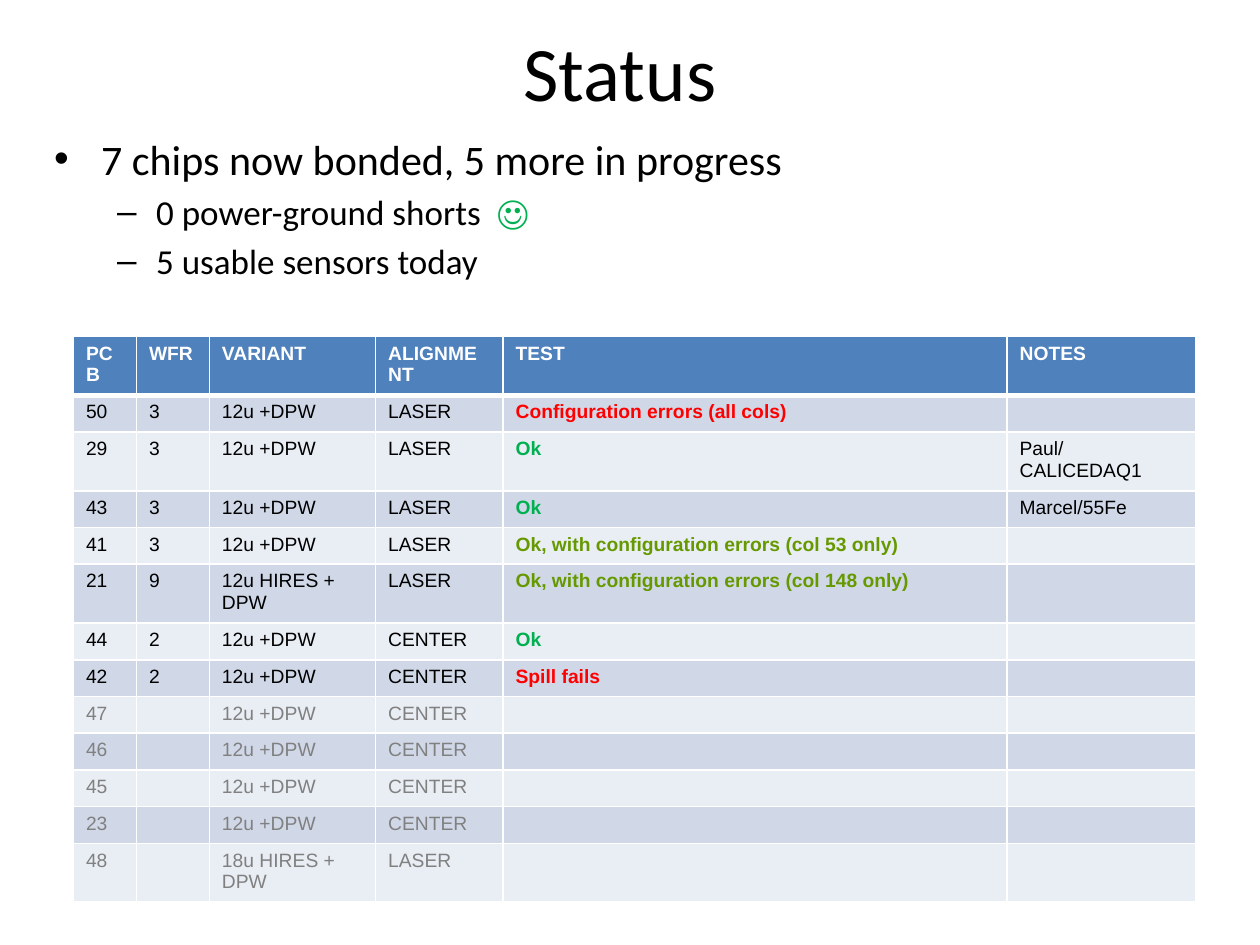
from lxml.etree import SubElement
from pptx import Presentation
from pptx.dml.color import RGBColor
from pptx.enum.text import MSO_ANCHOR, PP_ALIGN
from pptx.oxml.ns import qn
from pptx.util import Cm, Pt

COLORS = {
    "black": "000000", "white": "FFFFFF", "grey": "808080",
    "red": "FF0000", "green": "00B050", "olive": "669900",
    "header": "4F81BD", "odd": "D0D8E8", "even": "E9EDF4",
}
TITLE = "Status"
BULLETS = [
    (0, [("7 chips now bonded, 5 more in progress", "black")]),
    (1, [("0 power-ground shorts  ", "black"), ("☺", "green")]),
    (1, [("5 usable sensors today", "black")]),
]
LEVELS = [
    {"char": "•", "size": 24, "margin": 0.95, "hang": 0.95, "before": 0},
    {"char": "–", "size": 20, "margin": 2.06, "hang": 0.79, "before": 4},
]
HEADER = ["PCB", "WFR", "VARIANT", "ALIGNMENT", "TEST", "NOTES"]
TEST_COL = HEADER.index("TEST")
BONDED = [
    ("50", "3", "12u +DPW", "LASER", "Configuration errors (all cols)", "", "red"),
    ("29", "3", "12u +DPW", "LASER", "Ok", "Paul/CALICEDAQ1", "green"),
    ("43", "3", "12u +DPW", "LASER", "Ok", "Marcel/55Fe", "green"),
    ("41", "3", "12u +DPW", "LASER", "Ok, with configuration errors (col 53 only)", "", "olive"),
    ("21", "9", "12u HIRES + DPW", "LASER", "Ok, with configuration errors (col 148 only)", "", "olive"),
    ("44", "2", "12u +DPW", "CENTER", "Ok", "", "green"),
    ("42", "2", "12u +DPW", "CENTER", "Spill fails", "", "red"),
]
IN_PROGRESS = [
    ("47", "12u +DPW", "CENTER"),
    ("46", "12u +DPW", "CENTER"),
    ("45", "12u +DPW", "CENTER"),
    ("23", "12u +DPW", "CENTER"),
    ("48", "18u HIRES + DPW", "LASER"),
]
COL_WIDTHS = [1.27, 1.47, 3.35, 2.57, 10.16, 3.81]
ROW_HEIGHT = 0.74
CELL_SIZE = 11


def rgb(name):
    return RGBColor.from_string(COLORS[name])


def add_run(p, text, font, size, color, bold=False):
    r = p.add_run()
    r.text = text
    r.font.name = font
    r.font.size = Pt(size)
    r.font.bold = bold
    r.font.color.rgb = rgb(color)


def add_title(s):
    sp = s.shapes.title
    sp.left, sp.top, sp.width, sp.height = Cm(1.07), Cm(0.43), Cm(22.86), Cm(1.98)
    sp.text_frame.vertical_anchor = MSO_ANCHOR.MIDDLE
    p = sp.text_frame.paragraphs[0]
    p.alignment = PP_ALIGN.CENTER
    add_run(p, TITLE, "Calibri", 44, "black")


def add_bullets(s):
    tf = s.shapes.add_textbox(Cm(0.84), Cm(2.56), Cm(22.86), Cm(4.88)).text_frame
    tf.word_wrap = True
    for i, (level, runs) in enumerate(BULLETS):
        style = LEVELS[level]
        p = tf.add_paragraph() if i else tf.paragraphs[0]
        pPr = p._p.get_or_add_pPr()
        pPr.set("marL", str(Cm(style["margin"])))
        pPr.set("indent", str(-Cm(style["hang"])))
        SubElement(pPr, qn("a:buFont"), typeface="Arial")
        SubElement(pPr, qn("a:buChar"), char=style["char"])
        p.level = level
        p.space_before = Pt(style["before"])
        for text, color in runs:
            add_run(p, text, "Calibri", style["size"], color)


def set_borders(cell, top=1, bottom=1):
    tcPr = cell._tc.get_or_add_tcPr()
    for side, width in (("L", 1), ("R", 1), ("T", top), ("B", bottom)):
        ln = SubElement(tcPr, qn(f"a:ln{side}"), w=str(Pt(width)))
        fill = SubElement(ln, qn("a:solidFill"))
        SubElement(fill, qn("a:srgbClr"), val=COLORS["white"])


def fill_cell(cell, text, fill, color, bold, top, bottom):
    set_borders(cell, top, bottom)
    cell.fill.solid()
    cell.fill.fore_color.rgb = rgb(fill)
    p = cell.text_frame.paragraphs[0]
    if text:
        add_run(p, text, "Arial", CELL_SIZE, color, bold)
    else:
        SubElement(p._p, qn("a:endParaRPr"), sz=str(CELL_SIZE * 100))


def add_status_table(s):
    rows = [(HEADER, "white", "white")]
    rows += [(row[:-1], "black", row[-1]) for row in BONDED]
    rows += [((pcb, "", variant, align, "", ""), "grey", "grey")
             for pcb, variant, align in IN_PROGRESS]
    table = s.shapes.add_table(
        len(rows), len(HEADER), Cm(1.48), Cm(6.78),
        Cm(sum(COL_WIDTHS)), Cm(ROW_HEIGHT * len(rows))).table
    for col, width in zip(table.columns, COL_WIDTHS):
        col.width = Cm(width)
    for i, (texts, color, test_color) in enumerate(rows):
        table.rows[i].height = Cm(ROW_HEIGHT)
        fill = "header" if i == 0 else ("even", "odd")[i % 2]
        for j, text in enumerate(texts):
            is_test = j == TEST_COL
            fill_cell(table.cell(i, j), text, fill,
                      test_color if is_test else color, i == 0 or is_test,
                      top=3 if i == 1 else 1, bottom=3 if i == 0 else 1)


def main():
    """Build the chip status slide."""
    prs = Presentation()
    prs.slide_width, prs.slide_height = Cm(25.4), Cm(19.05)
    s = prs.slides.add_slide(prs.slide_layouts[5])
    add_title(s)
    add_bullets(s)
    add_status_table(s)
    prs.save("out.pptx")


if __name__ == "__main__":
    main()
